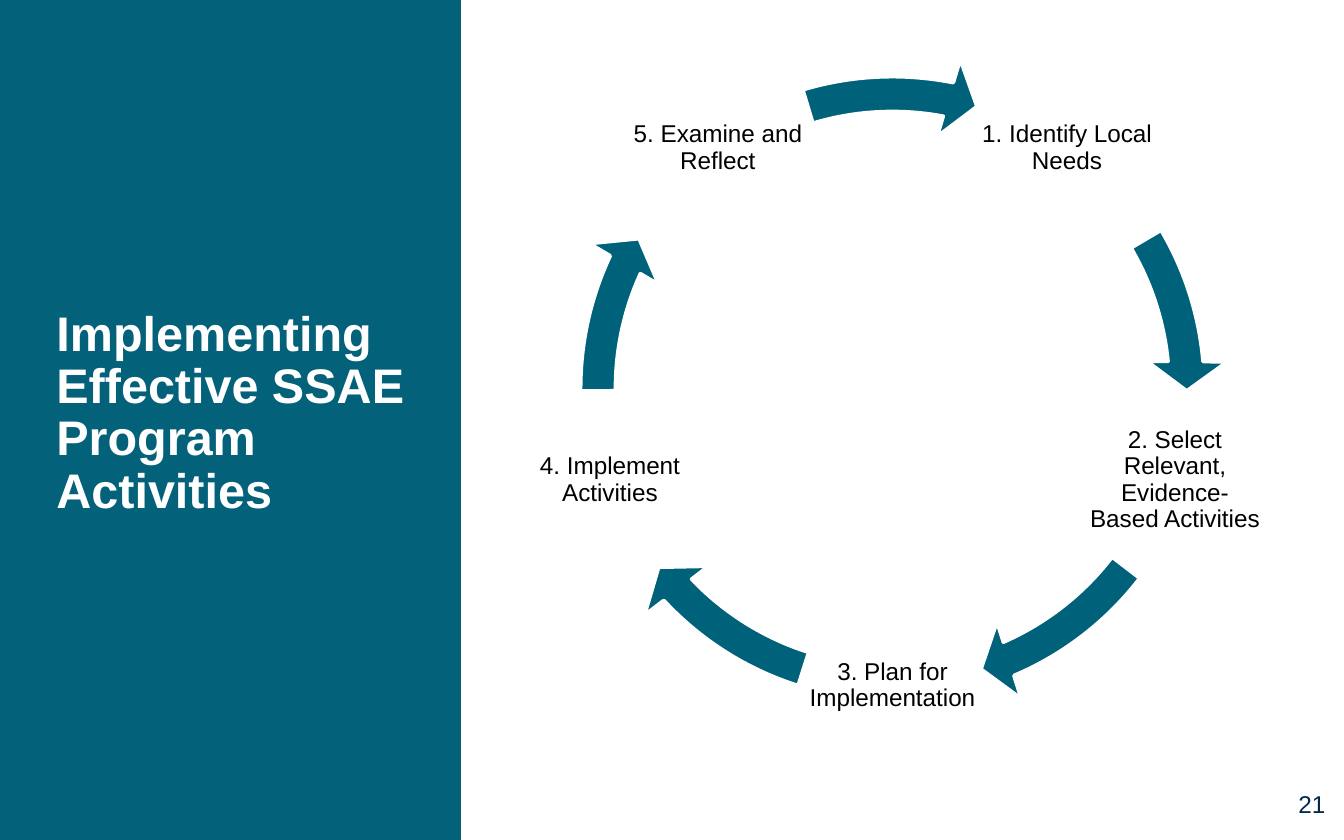
from math import atan, cos, asin, degrees, radians, sin, tan

from lxml.etree import SubElement
from pptx import Presentation
from pptx.dml.color import RGBColor
from pptx.enum.shapes import MSO_SHAPE
from pptx.enum.text import MSO_ANCHOR as ANCHOR, PP_ALIGN as ALIGN
from pptx.oxml.ns import qn
from pptx.util import Inches, Pt

PANEL_TEAL = RGBColor(0x03, 0x61, 0x7A)
ARROW_TEAL = RGBColor(0x00, 0x61, 0x7A)
NAVY = RGBColor(0x00, 0x2A, 0x4B)
BLACK = RGBColor(0x00, 0x00, 0x00)
WHITE = RGBColor(0xFF, 0xFF, 0xFF)

CENTER_X, CENTER_Y = 6.64, 2.89
RING_LEFT, RING_TOP, RING_SIZE = 4.14, 0.39, 4.99
LABEL_RADIUS, LABEL_SIZE = 2.21, 1.33
OUTER_RADIUS, INNER_RADIUS, TIP_RADIUS = 2.32, 2.06, 2.19
HEAD_LENGTH, HEAD_HALF_WIDTH = 0.22, 0.3


def polar(radius, angle):
    turn = radians(angle)
    return CENTER_X + radius * cos(turn), CENTER_Y + radius * sin(turn)


def add_text(slide, text, box, size, color, margins, align, anchor, spacing=1.0, bold=False):
    shape = slide.shapes.add_textbox(*[Inches(value) for value in box])
    text_frame = shape.text_frame
    text_frame.word_wrap = True
    text_frame.vertical_anchor = anchor
    text_frame.margin_left = text_frame.margin_right = Inches(margins[0])
    text_frame.margin_top = text_frame.margin_bottom = Inches(margins[1])
    text_frame.text = text
    paragraph = text_frame.paragraphs[0]
    paragraph.alignment = align
    paragraph.line_spacing = spacing
    font = paragraph.runs[0].font
    font.name = "Arial"
    font.size = Pt(size)
    font.bold = bold
    font.color.rgb = color


presentation = Presentation()
presentation.slide_width = Inches(10)
presentation.slide_height = Inches(6.25)
slide = presentation.slides.add_slide(presentation.slide_layouts[6])

panel = slide.shapes.add_shape(MSO_SHAPE.RECTANGLE, 0, 0, Inches(3.43), Inches(6.25))
panel.shadow.inherit = False
panel.fill.solid()
panel.fill.fore_color.rgb = PANEL_TEAL
panel.line.fill.background()

add_text(slide, "Implementing Effective SSAE Program Activities", (0.34, 0.39, 2.9, 5.38),
         26, WHITE, (0.08, 0.04), ALIGN.LEFT, ANCHOR.MIDDLE, 0.9, True)

steps = [
    ("1. Identify Local Needs", -30.5, 0.5),
    ("2. Select Relevant, Evidence-Based Activities", 37.5, 72.5),
    ("3. Plan for Implementation", 107.6, 142.6),
    ("4. Implement Activities", 179.5, 210.6),
    ("5. Examine and Reflect", 253.3, 286.7),
]

for index, (label, start, tip) in enumerate(steps):
    label_x, label_y = polar(LABEL_RADIUS, -54 + 72 * index)
    box = (label_x - LABEL_SIZE / 2, label_y - LABEL_SIZE / 2, LABEL_SIZE, LABEL_SIZE)
    add_text(slide, label, box, 13, BLACK, (0.02, 0.02), ALIGN.CENTER, ANCHOR.MIDDLE, 0.9)

    arcs = []
    for radius in (OUTER_RADIUS, INNER_RADIUS):
        end = tip - degrees(asin(HEAD_LENGTH / radius))
        bend = degrees(atan(4 / 3 * tan(radians(end - start) / 4)))
        reach = radius / cos(radians(bend))
        arcs.append([polar(radius, start), polar(reach, start + bend),
                     polar(reach, end - bend), polar(radius, end)])
    outer_arc, inner_arc = arcs
    inner_arc.reverse()

    tip_x, tip_y = polar(TIP_RADIUS, tip)
    across_x, across_y = cos(radians(tip)), sin(radians(tip))
    base_x = tip_x + HEAD_LENGTH * across_y
    base_y = tip_y - HEAD_LENGTH * across_x
    head = [
        (base_x + HEAD_HALF_WIDTH * across_x, base_y + HEAD_HALF_WIDTH * across_y),
        (tip_x, tip_y),
        (base_x - HEAD_HALF_WIDTH * across_x, base_y - HEAD_HALF_WIDTH * across_y),
    ]

    outline = [(Inches(x), Inches(y)) for x, y in outer_arc + head + inner_arc]
    builder = slide.shapes.build_freeform(*outline[0])
    builder.add_line_segments(outline[1:], close=True)
    arrow = builder.convert_to_shape()
    arrow.left, arrow.top = Inches(RING_LEFT), Inches(RING_TOP)
    arrow.width = arrow.height = Inches(RING_SIZE)

    path = next(arrow._element.iter(qn("a:path")))
    for segment in list(path):
        path.remove(segment)
    path.set("w", str(arrow.width))
    path.set("h", str(arrow.height))
    segments = [("a:moveTo", outer_arc[:1]), ("a:cubicBezTo", outer_arc[1:])]
    segments += [("a:lnTo", [point]) for point in head + inner_arc[:1]]
    segments += [("a:cubicBezTo", inner_arc[1:]), ("a:close", [])]
    for tag, points in segments:
        segment = SubElement(path, qn(tag))
        for x, y in points:
            SubElement(segment, qn("a:pt"), x=str(Inches(x - RING_LEFT)), y=str(Inches(y - RING_TOP)))

    arrow.shadow.inherit = False
    arrow.fill.solid()
    arrow.fill.fore_color.rgb = ARROW_TEAL
    arrow.line.color.rgb = WHITE
    arrow.line.width = Pt(2)

add_text(slide, "21", (9.5, 5.77, 0.46, 0.48), 13, NAVY, (0.1, 0.1), ALIGN.RIGHT, ANCHOR.TOP)

presentation.save("out.pptx")
